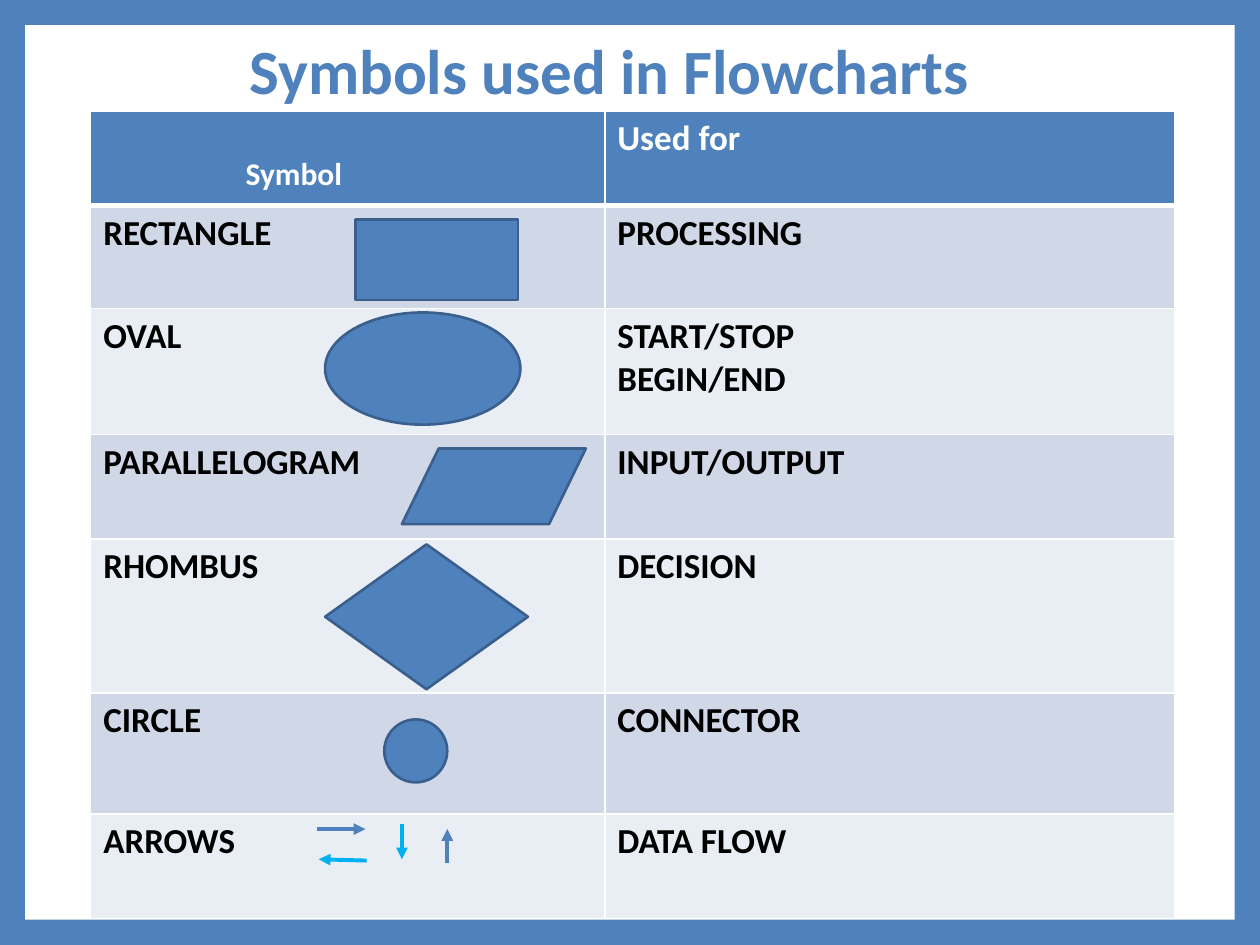
import itertools
import pptx
import pptx.dml.color
import pptx.enum.shapes
import pptx.enum.text
import pptx.oxml.ns
import pptx.util
from lxml import etree

Inches, Pt = pptx.util.Inches, pptx.util.Pt
RGBColor = pptx.dml.color.RGBColor
SHAPE = pptx.enum.shapes.MSO_SHAPE
qn = pptx.oxml.ns.qn

BLUE = RGBColor(0x4F, 0x81, 0xBD)
OUTLINE = RGBColor(0x3A, 0x5F, 0x8C)
CYAN = RGBColor(0x00, 0xB0, 0xF0)
WHITE = RGBColor(0xFF, 0xFF, 0xFF)
BLACK = RGBColor(0, 0, 0)
BANDS = [RGBColor(0xD0, 0xD8, 0xE8), RGBColor(0xE9, 0xED, 0xF4)]
FONT = "Calibri"

WIDTH, HEIGHT, FRAME = 10, 7.5, 0.2
LEFT, TOP = 0.72, 0.88
COLUMNS = [4.08, 4.52]
ROWS = [0.75, 0.82, 1, 0.83, 1.22, 0.96, 0.83]
ROW_TOPS = list(itertools.accumulate(ROWS, initial=TOP))

ENTRIES = [
    ("Symbol", "Used for"),
    ("RECTANGLE", "PROCESSING"),
    ("OVAL", "START/STOP\nBEGIN/END"),
    ("PARALLELOGRAM", "INPUT/OUTPUT"),
    ("RHOMBUS", "DECISION"),
    ("CIRCLE", "CONNECTOR"),
    ("ARROWS", "DATA FLOW"),
]
# Outline, then offset from the row's top left corner, width and height
SYMBOLS = [
    (SHAPE.RECTANGLE, 2.1, 0.11, 1.29, 0.64),
    (SHAPE.OVAL, 1.86, 0.03, 1.55, 0.89),
    (SHAPE.FLOWCHART_DATA, 2.47, 0.11, 1.46, 0.6),
    (SHAPE.FLOWCHART_DECISION, 1.86, 0.04, 1.61, 1.15),
    (SHAPE.FLOWCHART_CONNECTOR, 2.33, 0.21, 0.5, 0.5),
]
# Start and end as offsets from the last row's top left corner
ARROWS = [
    (1.8, 0.12, 2.18, 0.12, BLUE),
    (2.19, 0.37, 1.81, 0.36, CYAN),
    (2.47, 0.08, 2.47, 0.36, CYAN),
    (2.83, 0.39, 2.83, 0.12, BLUE),
]


def format_text(frame, size, color):
    for paragraph in frame.paragraphs:
        for run in paragraph.runs:
            run.font.name = FONT
            run.font.size = Pt(size)
            run.font.bold = True
            run.font.color.rgb = color


def add_filled_shape(slide, kind, left, top, width, height, fill, outline=None):
    shape = slide.shapes.add_shape(
        kind, Inches(left), Inches(top), Inches(width), Inches(height))
    shape.shadow.inherit = False
    shape.fill.solid()
    shape.fill.fore_color.rgb = fill
    if outline is None:
        shape.line.fill.background()
    else:
        shape.line.color.rgb = outline
        shape.line.width = Pt(1.5)
    return shape


def set_title(slide, text):
    title = slide.shapes.title
    title.left, title.top = Inches(1.88), 0
    title.width, title.height = Inches(8.12), Inches(1.17)
    title.text_frame.text = text
    title.text_frame.vertical_anchor = pptx.enum.text.MSO_ANCHOR.MIDDLE
    paragraph = title.text_frame.paragraphs[0]
    paragraph.alignment = pptx.enum.text.PP_ALIGN.LEFT
    paragraph.line_spacing = 0.9
    format_text(title.text_frame, 36, BLUE)
    return title


def set_borders(cell, widths):
    properties = cell._tc.get_or_add_tcPr()
    for side, width in widths.items():
        border = etree.SubElement(properties, qn(f"a:ln{side}"), w=str(Pt(width)))
        fill = etree.SubElement(border, qn("a:solidFill"))
        etree.SubElement(fill, qn("a:srgbClr"), val=str(WHITE))


def add_symbol_table(slide):
    table = slide.shapes.add_table(
        len(ROWS), len(COLUMNS), Inches(LEFT), Inches(TOP),
        Inches(sum(COLUMNS)), Inches(sum(ROWS))).table
    for column, width in zip(table.columns, COLUMNS):
        column.width = Inches(width)
    for r, (height, texts) in enumerate(zip(ROWS, ENTRIES)):
        table.rows[r].height = Inches(height)
        for c, text in enumerate(texts):
            cell = table.cell(r, c)
            set_borders(cell, {"L": 1, "R": 1, "T": 3 if r == 1 else 1,
                               "B": 3 if r == 0 else 1})
            cell.fill.solid()
            cell.fill.fore_color.rgb = BANDS[(r - 1) % 2] if r else BLUE
            cell.text_frame.text = text
            format_text(cell.text_frame, 20, BLACK if r else WHITE)

    # The first heading sits low and indented
    heading = table.cell(0, 0)
    heading.vertical_anchor = pptx.enum.text.MSO_ANCHOR.BOTTOM
    heading.margin_left, heading.margin_bottom = Inches(1.23), Inches(0.09)
    format_text(heading.text_frame, 18, WHITE)


def add_arrow(slide, x1, y1, x2, y2, color):
    arrow = slide.shapes.add_connector(
        pptx.enum.shapes.MSO_CONNECTOR.STRAIGHT,
        Inches(x1), Inches(y1), Inches(x2), Inches(y2))
    arrow.line.color.rgb = color
    arrow.line.width = Pt(2.25)
    etree.SubElement(arrow.line._get_or_add_ln(), qn("a:tailEnd"), type="triangle")
    etree.SubElement(arrow.element.spPr, qn("a:effectLst"))


def main():
    deck = pptx.Presentation()
    deck.slide_width, deck.slide_height = Inches(WIDTH), Inches(HEIGHT)
    slide = deck.slides.add_slide(deck.slide_layouts[5])

    # Blue frame around a white panel, with the panel behind the title
    slide.background.fill.solid()
    slide.background.fill.fore_color.rgb = BLUE
    title = set_title(slide, "Symbols used in Flowcharts")
    panel = add_filled_shape(slide, SHAPE.RECTANGLE, FRAME, FRAME,
                             WIDTH - 2 * FRAME, HEIGHT - 2 * FRAME, WHITE)
    title.element.addprevious(panel.element)

    add_symbol_table(slide)

    # Flowchart symbols, one to a row below the heading
    for row_top, (kind, dx, dy, width, height) in zip(ROW_TOPS[1:], SYMBOLS):
        add_filled_shape(slide, kind, LEFT + dx, row_top + dy, width, height,
                         BLUE, OUTLINE)

    # Data flow arrows in the last row
    last_top = ROW_TOPS[len(ROWS) - 1]
    for x1, y1, x2, y2, color in ARROWS:
        add_arrow(slide, LEFT + x1, last_top + y1, LEFT + x2, last_top + y2, color)

    deck.save("out.pptx")


if __name__ == "__main__":
    main()
